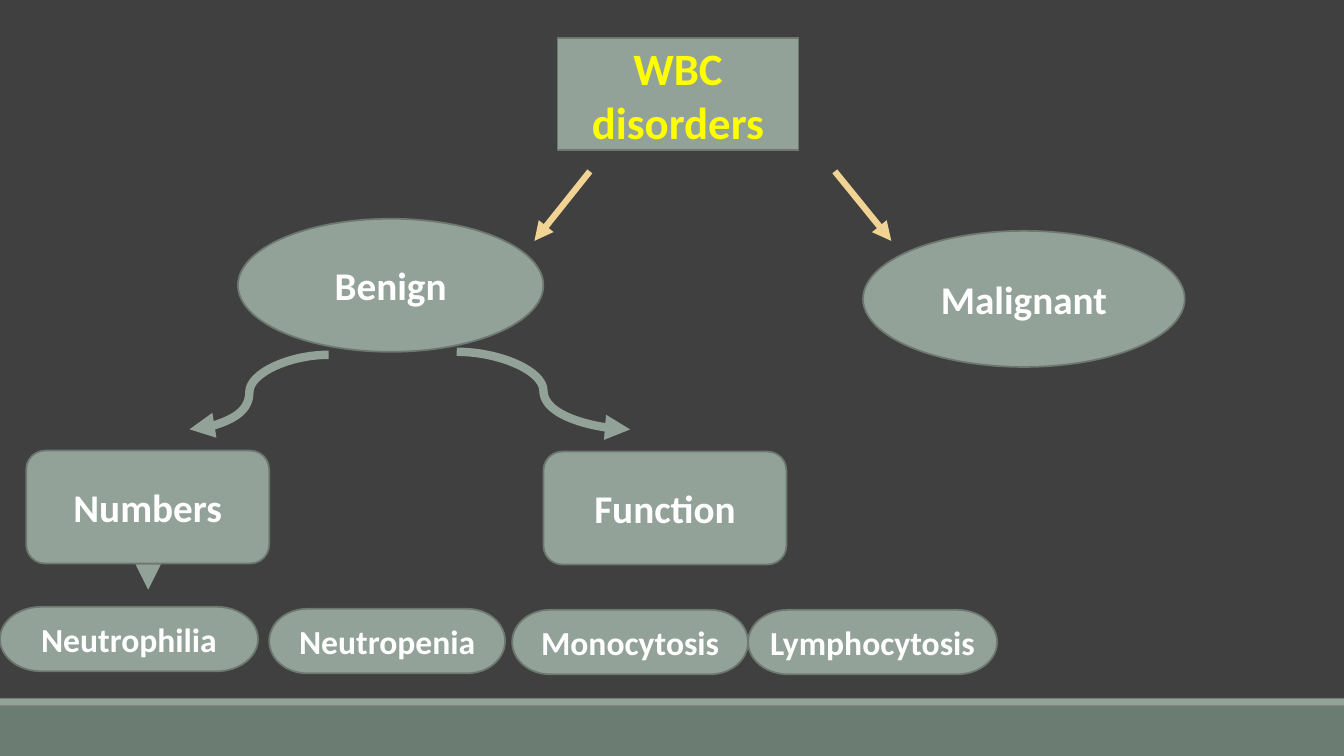
"""Build a slide that classifies white blood cell disorders as a tree."""
from dataclasses import dataclass

from pptx import Presentation
from pptx import util as u
from pptx.dml.color import RGBColor
from pptx.enum import shapes, text
from pptx.oxml import ns
from lxml import etree


@dataclass(frozen=True)
class Theme:
    """Colours, font and type sizes of the slide."""
    background: str = "404040"
    band: str = "6B7D72"
    sage: str = "93A299"
    outline: str = "6D7871"
    gold: str = "F1D394"
    yellow: str = "FFFF00"
    white: str = "FFFFFF"
    font: str = "Calibri"
    root_size: int = 32
    branch_size: int = 28
    leaf_size: int = 24


THEME = Theme()
KIND = shapes.MSO_SHAPE
CURVE = shapes.MSO_CONNECTOR.CURVE
STRAIGHT = shapes.MSO_CONNECTOR.STRAIGHT


def apply_format(target, values):
    """Set each named value on the target."""
    for name, value in values.items():
        setattr(target, name, value)


def add_block(slide, kind, box, fill):
    """Add a filled shape without shadow or outline."""
    shape = slide.shapes.add_shape(kind, *map(u.Inches, box))
    shape.shadow.inherit = False
    shape.fill.solid()
    shape.fill.fore_color.rgb = RGBColor.from_string(fill)
    shape.line.fill.background()
    return shape


def add_node(slide, kind, box, label, size, color=THEME.white, inset=0.1):
    """Add an outlined shape with a centred bold label."""
    shape = add_block(slide, kind, box, THEME.sage)
    shape.line.color.rgb = RGBColor.from_string(THEME.outline)
    shape.line.width = u.Pt(1.25)
    apply_format(shape.text_frame, {
        "word_wrap": True,
        "vertical_anchor": text.MSO_ANCHOR.MIDDLE,
        "margin_left": u.Inches(inset),
        "margin_right": u.Inches(inset),
    })
    paragraph = shape.text_frame.paragraphs[0]
    paragraph.alignment = text.PP_ALIGN.CENTER
    run = paragraph.add_run()
    run.text = label
    apply_format(run.font, {"name": THEME.font, "size": u.Pt(size), "bold": True})
    run.font.color.rgb = RGBColor.from_string(color)


def add_arrow(slide, kind, start, end, color, width, bend=None):
    """Add a connector with a triangular head, optionally moving its bend."""
    connector = slide.shapes.add_connector(kind, *map(u.Inches, (*start, *end)))
    connector.line.color.rgb = RGBColor.from_string(color)
    connector.line.width = u.Pt(width)
    properties = connector._element.spPr
    line = properties.find(ns.qn("a:ln"))
    etree.SubElement(line, ns.qn("a:tailEnd"), type="triangle")
    etree.SubElement(properties, ns.qn("a:effectLst"))
    if bend is not None:
        guides = properties.find(ns.qn("a:prstGeom")).get_or_add_avLst()
        etree.SubElement(guides, ns.qn("a:gd"), name="adj1",
                         fmla=f"val {round(bend * 100000)}")


def add_footer(slide):
    """Add the two bands along the bottom edge."""
    add_block(slide, KIND.RECTANGLE, (0, 7, 13.33, 0.5), THEME.band)
    add_block(slide, KIND.RECTANGLE, (0, 6.93, 13.33, 0.07), THEME.sage)


def add_nodes(slide):
    """Add the root, the branches and the leaves of the tree."""
    add_node(slide, KIND.RECTANGLE, (5.53, 0.38, 2.39, 1.11),
             "WBC disorders", THEME.root_size, THEME.yellow)
    branches = (
        ("Benign", KIND.OVAL, (2.36, 2.17, 3.03, 1.32)),
        ("Malignant", KIND.OVAL, (8.56, 2.29, 3.19, 1.35)),
        ("Numbers", KIND.ROUNDED_RECTANGLE, (0.26, 4.47, 2.41, 1.12)),
        ("Function", KIND.ROUNDED_RECTANGLE, (5.39, 4.48, 2.41, 1.12)),
    )
    for label, kind, box in branches:
        add_node(slide, kind, box, label, THEME.branch_size)
    leaves = (
        ("Neutrophilia", 0, 6.02, 2.56),
        ("Neutropenia", 2.67, 6.04, 2.34),
        ("Monocytosis", 5.08, 6.05, 2.34),
        ("Lymphocytosis", 7.42, 6.05, 2.47),
    )
    for label, left, top, width in leaves:
        add_node(slide, KIND.FLOWCHART_TERMINATOR, (left, top, width, 0.64),
                 label, THEME.leaf_size, inset=0.05)


def add_arrows(slide):
    """Add the arrows between the levels of the tree."""
    for start_x, end_x in ((5.85, 5.3), (8.28, 8.84)):
        add_arrow(slide, STRAIGHT, (start_x, 1.7), (end_x, 2.39), THEME.gold, 4.5)
    add_arrow(slide, CURVE, (4.53, 3.49), (6.25, 4.26), THEME.sage, 6)
    add_arrow(slide, CURVE, (3.26, 3.52), (1.88, 4.26), THEME.sage, 6, bend=0.57)
    add_arrow(slide, STRAIGHT, (1.47, 5.65), (1.47, 5.85), THEME.sage, 6)


def main():
    """Build and save the presentation."""
    presentation = Presentation()
    apply_format(presentation, {"slide_width": u.Inches(13.33),
                                "slide_height": u.Inches(7.5)})
    slide = presentation.slides.add_slide(presentation.slide_layouts[6])
    slide.background.fill.solid()
    slide.background.fill.fore_color.rgb = RGBColor.from_string(THEME.background)
    add_footer(slide)
    add_nodes(slide)
    add_arrows(slide)
    presentation.save("out.pptx")


if __name__ == "__main__":
    main()
